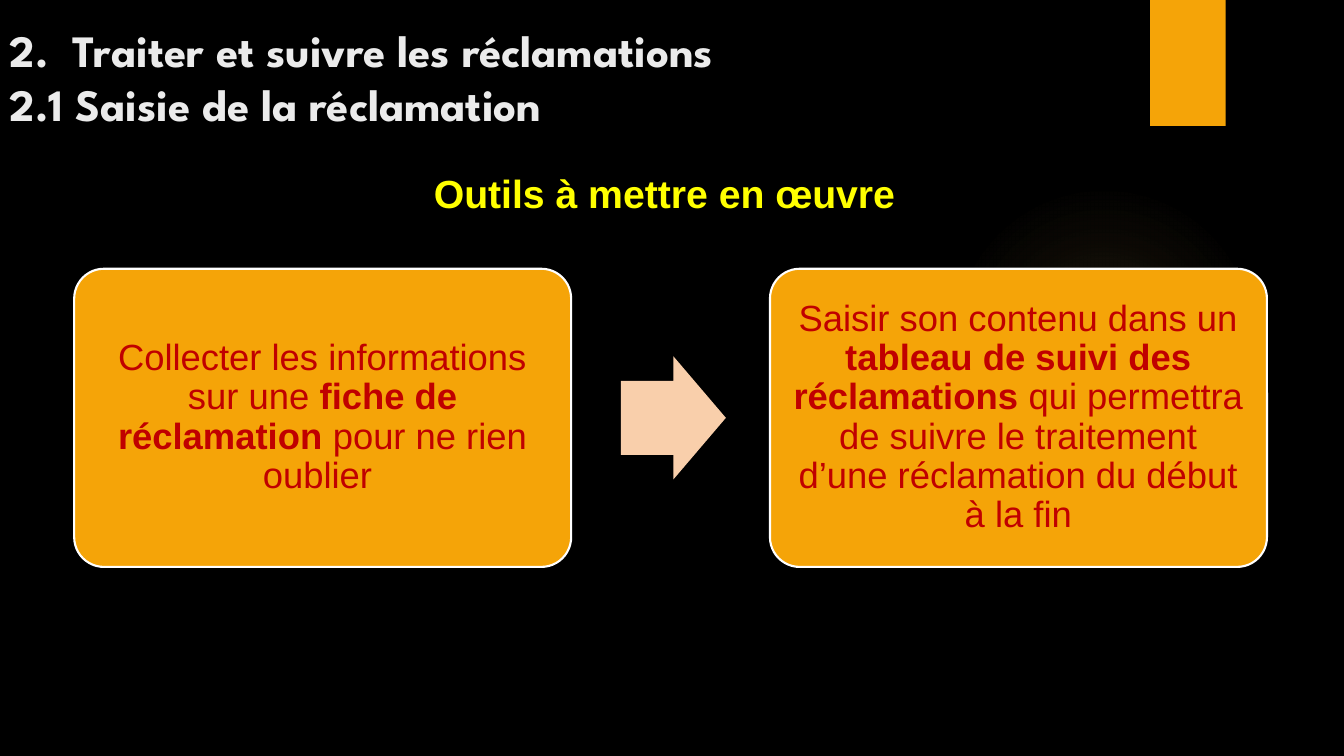
from dataclasses import dataclass

from pptx import Presentation
from pptx.dml.color import RGBColor
from pptx.enum.shapes import MSO_SHAPE
from pptx.enum.text import MSO_ANCHOR, PP_ALIGN
from pptx.oxml import parse_xml
from pptx.util import Pt

RECTANGLE = MSO_SHAPE.RECTANGLE
ROUNDED = MSO_SHAPE.ROUNDED_RECTANGLE
ARROW = MSO_SHAPE.RIGHT_ARROW
OVAL = MSO_SHAPE.OVAL
CENTER = PP_ALIGN.CENTER
MIDDLE = MSO_ANCHOR.MIDDLE
BOTTOM = MSO_ANCHOR.BOTTOM
DRAWING = "http://schemas.openxmlformats.org/drawingml/2006/main"


@dataclass(frozen=True)
class Theme:
    background: str = "000000"
    accent: str = "F5A408"
    glow: str = "FAC96A"
    arrow: str = "F9CFAB"
    outline: str = "FFFFFF"
    title: str = "EBEBEB"
    heading: str = "FFFF00"
    body: str = "C00000"
    title_font: str = "League Spartan"
    body_font: str = "Arial"
    title_size: int = 32
    heading_size: int = 28
    body_size: int = 26


THEME = Theme()
GLOW_STOPS = [(0, 7), (36, 6), (69, 0)]
STEPS = [
    [
        ("Collecter les informations sur une ", False),
        ("fiche de réclamation ", True),
        ("pour ne rien oublier ", False),
    ],
    [
        ("Saisir son contenu dans un ", False),
        ("tableau de suivi des réclamations ", True),
        ("qui permettra de suivre le traitement d’une réclamation du début à la fin", False),
    ],
]


def color(value):
    return RGBColor.from_string(value)


def style_span(span, font, size, value, bold):
    span.font.name = font
    span.font.size = Pt(size)
    span.font.color.rgb = color(value)
    span.font.bold = bold


def add_block(page, kind, left, top, width, height, fill):
    shape = page.shapes.add_shape(kind, Pt(left), Pt(top), Pt(width), Pt(height))
    shape.shadow.inherit = False
    shape.fill.solid()
    shape.fill.fore_color.rgb = color(fill)
    shape.line.fill.background()
    return shape


def add_glow(page, left, top, size):
    glow = add_block(page, OVAL, left, top, size, size, THEME.glow)
    stops = "".join(
        f'<a:gs pos="{position * 1000}"><a:srgbClr val="{THEME.glow}">'
        f'<a:alpha val="{alpha * 1000}"/></a:srgbClr></a:gs>'
        for position, alpha in GLOW_STOPS
    )
    gradient = parse_xml(
        f'<a:gradFill xmlns:a="{DRAWING}"><a:gsLst>{stops}</a:gsLst><a:path path="circle">'
        '<a:fillToRect l="50000" t="50000" r="50000" b="50000"/></a:path></a:gradFill>'
    )
    properties = glow.element.spPr
    properties.replace(properties.find(f"{{{DRAWING}}}solidFill"), gradient)


def add_line_of_text(page, left, top, width, height, text, font, size, value):
    box = page.shapes.add_textbox(Pt(left), Pt(top), Pt(width), Pt(height))
    frame = box.text_frame
    frame.word_wrap = True
    para = frame.paragraphs[0]
    para.text = text
    for span in para.runs:
        style_span(span, font, size, value, True)
    return frame


def add_header(page, left, top, width, height):
    frame = add_line_of_text(
        page, left, top, width, height,
        "2.  Traiter et suivre les réclamations\v2.1 Saisie de la réclamation",
        THEME.title_font, THEME.title_size, THEME.title,
    )
    frame.vertical_anchor = BOTTOM


def add_heading(page, left, top, width, height):
    frame = add_line_of_text(
        page, left, top, width, height, "Outils à mettre en œuvre ",
        THEME.body_font, THEME.heading_size, THEME.heading,
    )
    frame.paragraphs[0].alignment = CENTER


def add_card(page, left, top, width, height, spans):
    card = add_block(page, ROUNDED, left, top, width, height, THEME.accent)
    card.adjustments[0] = 0.1
    card.line.color.rgb = color(THEME.outline)
    card.line.width = Pt(1.5)
    frame = card.text_frame
    frame.word_wrap = True
    frame.vertical_anchor = MIDDLE
    frame.margin_left = frame.margin_right = Pt(8)
    frame.margin_top = frame.margin_bottom = Pt(8)
    para = frame.paragraphs[0]
    para.alignment = CENTER
    para.line_spacing = 0.9
    for text, bold in spans:
        span = para.add_run()
        span.text = text
        style_span(span, THEME.body_font, THEME.body_size, THEME.body, bold)


def add_process(page, left, top, width, height):
    card_width = width / 2.4
    gap = card_width * 0.1
    arrow_width, arrow_height = 75, 88
    for index, spans in enumerate(STEPS):
        add_card(page, left + index * card_width * 1.4, top, card_width, height, spans)
    arrow = add_block(
        page, ARROW, left + card_width + gap, top + (height - arrow_height) / 2,
        arrow_width, arrow_height, THEME.arrow,
    )
    arrow.adjustments[0] = 0.6
    arrow.adjustments[1] = 0.5


def main():
    deck = Presentation()
    deck.slide_width, deck.slide_height = Pt(960), Pt(540)
    page = deck.slides.add_slide(deck.slide_layouts[6])
    page.background.fill.solid()
    page.background.fill.fore_color.rgb = color(THEME.background)
    add_glow(page, 677.5, 132, 222)
    add_block(page, RECTANGLE, 821.5, 0, 54, 90, THEME.accent)
    add_header(page, 0, 0, 695, 96.5)
    add_heading(page, 34, 117.5, 889, 41)
    add_process(page, 53, 192, 852, 213)
    deck.save("out.pptx")


if __name__ == "__main__":
    main()
